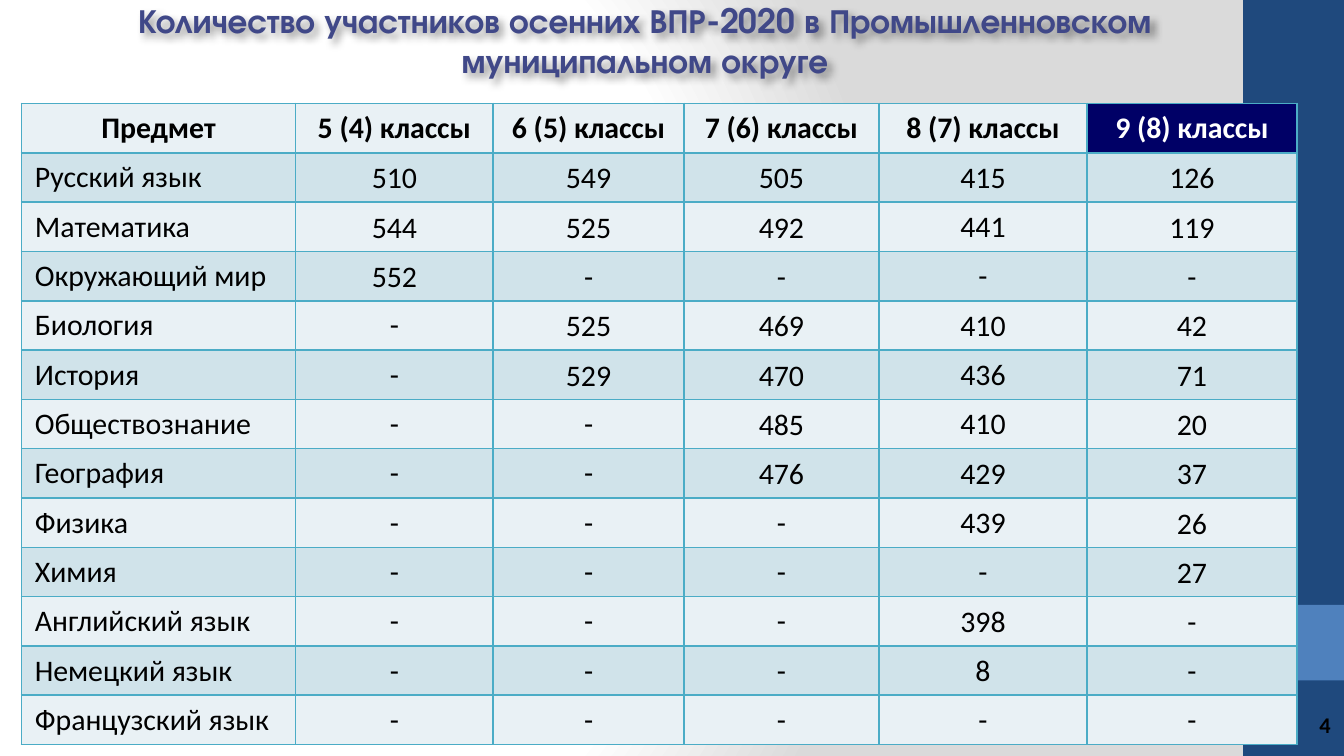
from dataclasses import dataclass

from lxml.etree import SubElement
from pptx import Presentation
from pptx.dml.color import RGBColor
from pptx.enum.shapes import MSO_SHAPE
from pptx.enum.text import MSO_ANCHOR, PP_ALIGN
from pptx.oxml import parse_xml
from pptx.oxml.ns import nsdecls, qn
from pptx.util import Inches, Pt

WIDTH, HEIGHT = Inches(10), Inches(5.625)


@dataclass(frozen=True)
class Theme:
    navy: str = "1F497D"
    blue: str = "4F81BD"
    title: str = "404888"
    text: str = "000000"
    white: str = "FFFFFF"
    backdrop: str = "DADADA"
    border: str = "4BACC6"
    accent: str = "000066"
    bands: tuple[str, str] = ("E9F1F5", "D0E3EA")
    heading_font: str = "TeX Gyre Adventor"
    body_font: str = "Calibri"
    heading_size: int = 18
    body_size: int = 16
    number_size: int = 12


@dataclass(frozen=True)
class Area:
    """Left, top, width and height in percent of the slide."""
    left: float
    top: float
    width: float
    height: float

    def lengths(self) -> tuple[int, int, int, int]:
        return (int(WIDTH * self.left / 100), int(HEIGHT * self.top / 100),
                int(WIDTH * self.width / 100), int(HEIGHT * self.height / 100))


@dataclass(frozen=True)
class CellStyle:
    """Insets in inches, line spacing in lines, space after in points."""
    insets: tuple[float, float, float, float] = (0.1, 0.05, 0.1, 0.05)
    line_spacing: float | None = None
    space_after: int | None = None


PLAIN = CellStyle()
SPACED = CellStyle((0.07, 0, 0.07, 0), 1.07, 8)
TIGHT = CellStyle((0.01, 0.01, 0.01, 0))


@dataclass(frozen=True)
class Column:
    """Width in percent of the slide; the first rows are spaced, the rest use another style."""
    heading: str
    width: float
    spaced_rows: int = 0
    rest: CellStyle = PLAIN


THEME = Theme()
COLUMNS = (
    Column("Предмет", 20.4),
    Column("5 (4) классы", 14.7, 3),
    Column("6 (5) классы", 14.2, 5),
    Column("7 (6) классы", 14.5, 7),
    Column("8 (7) классы", 15.5, 0, TIGHT),
    Column("9 (8) классы", 15.6, 9, TIGHT),
)
SUBJECTS = (
    ("Русский язык", "510", "549", "505", "415", "126"),
    ("Математика", "544", "525", "492", "441", "119"),
    ("Окружающий мир", "552", "-", "-", "-", "-"),
    ("Биология", "-", "525", "469", "410", "42"),
    ("История", "-", "529", "470", "436", "71"),
    ("Обществознание", "-", "-", "485", "410", "20"),
    ("География", "-", "-", "476", "429", "37"),
    ("Физика", "-", "-", "-", "439", "26"),
    ("Химия", "-", "-", "-", "-", "27"),
    ("Английский язык", "-", "-", "-", "398", "-"),
    ("Немецкий язык", "-", "-", "-", "8", "-"),
    ("Французский язык", "-", "-", "-", "-", "-"),
)


def write(frame, text: str, *, size: int = THEME.body_size, font: str = THEME.body_font,
          color: str = THEME.text, bold: bool = False, align=PP_ALIGN.CENTER,
          line_spacing: float | None = None, space_after: int | None = None) -> None:
    para = frame.paragraphs[0]
    para.alignment = align
    para.line_spacing = line_spacing
    para.space_after = None if space_after is None else Pt(space_after)
    span = para.add_run()
    span.text = text
    span.font.size, span.font.name, span.font.bold = Pt(size), font, bold
    span.font.color.rgb = RGBColor.from_string(color)


def paint_background(page) -> None:
    page.background.fill.solid()
    properties = page.element.find(".//" + qn("p:bgPr"))
    stops = ((0, THEME.white), (75, THEME.white), (100, THEME.backdrop))
    stop_xml = "".join(f'<a:gs pos="{share * 1000}"><a:srgbClr val="{color}"/></a:gs>'
                       for share, color in stops)
    gradient = parse_xml(
        f'<a:gradFill {nsdecls("a")} rotWithShape="1"><a:gsLst>{stop_xml}</a:gsLst>'
        '<a:path path="circle"><a:fillToRect l="20000" t="50000" r="100000" b="50000"/>'
        '</a:path></a:gradFill>')
    properties.replace(properties.find(qn("a:solidFill")), gradient)


def add_band(page, area: Area, color: str) -> None:
    band = page.shapes.add_shape(MSO_SHAPE.RECTANGLE, *area.lengths())
    band.shadow.inherit = False
    band.fill.solid()
    band.fill.fore_color.rgb = RGBColor.from_string(color)
    band.line.fill.background()


def add_text(page, area: Area, text: str, *, anchor=MSO_ANCHOR.TOP, **text_format):
    box = page.shapes.add_textbox(*area.lengths())
    box.text_frame.word_wrap = True
    box.text_frame.vertical_anchor = anchor
    write(box.text_frame, text, **text_format)
    return box


def add_soft_shadow(box) -> None:
    box.element.spPr.append(parse_xml(
        f'<a:effectLst {nsdecls("a")}><a:outerShdw blurRad="50800" dist="38100" dir="2700000">'
        '<a:srgbClr val="000000"><a:alpha val="40000"/></a:srgbClr></a:outerShdw></a:effectLst>'))


def fill_cell(cell, text: str, fill: str, style: CellStyle, **text_format) -> None:
    (cell.margin_left, cell.margin_top,
     cell.margin_right, cell.margin_bottom) = map(Inches, style.insets)
    cell.vertical_anchor = MSO_ANCHOR.MIDDLE
    write(cell.text_frame, text, line_spacing=style.line_spacing,
          space_after=style.space_after, **text_format)
    # Borders come before the fill in the cell properties
    properties = cell._tc.get_or_add_tcPr()
    for side in ("a:lnL", "a:lnR", "a:lnT", "a:lnB"):
        line = SubElement(properties, qn(side), w=str(Pt(1)))
        solid = SubElement(line, qn("a:solidFill"))
        SubElement(solid, qn("a:srgbClr"), val=THEME.border)
    cell.fill.solid()
    cell.fill.fore_color.rgb = RGBColor.from_string(fill)


def add_counts_table(page, area: Area) -> None:
    row_count = len(SUBJECTS) + 1
    table = page.shapes.add_table(row_count, len(COLUMNS), *area.lengths()).table
    for row in table.rows:
        row.height = int(HEIGHT * area.height / 100 / row_count)
    for index, column in enumerate(COLUMNS):
        table.columns[index].width = int(WIDTH * column.width / 100)
        last = index == len(COLUMNS) - 1
        fill_cell(table.cell(0, index), column.heading,
                  THEME.accent if last else THEME.bands[0], PLAIN,
                  color=THEME.white if last else THEME.text, bold=True)
        for number, subject in enumerate(SUBJECTS, start=1):
            fill_cell(table.cell(number, index), subject[index], THEME.bands[number % 2],
                      SPACED if number <= column.spaced_rows else column.rest,
                      align=PP_ALIGN.CENTER if index else PP_ALIGN.LEFT)


def main() -> None:
    deck = Presentation()
    deck.slide_width, deck.slide_height = WIDTH, HEIGHT
    page = deck.slides.add_slide(deck.slide_layouts[6])

    # Backdrop and side bands
    paint_background(page)
    add_band(page, Area(92.5, 0, 7.5, 100), THEME.navy)
    add_band(page, Area(92.5, 80, 7.5, 10), THEME.blue)

    # Page number and title
    add_text(page, Area(92.9, 93.16, 7.1, 5.33), "4", anchor=MSO_ANCHOR.MIDDLE,
             size=THEME.number_size, bold=True, align=PP_ALIGN.RIGHT)
    title = add_text(page, Area(3.4, -0.89, 89.2, 12.62),
                     "Количество участников осенних ВПР-2020 в Промышленновском "
                     "муниципальном округе", size=THEME.heading_size,
                     font=THEME.heading_font, color=THEME.title, bold=True)
    add_soft_shadow(title)

    # Participants by subject and class
    add_counts_table(page, Area(1.6, 13.69, 94.9, 84.8))
    deck.save("out.pptx")


if __name__ == "__main__":
    main()
